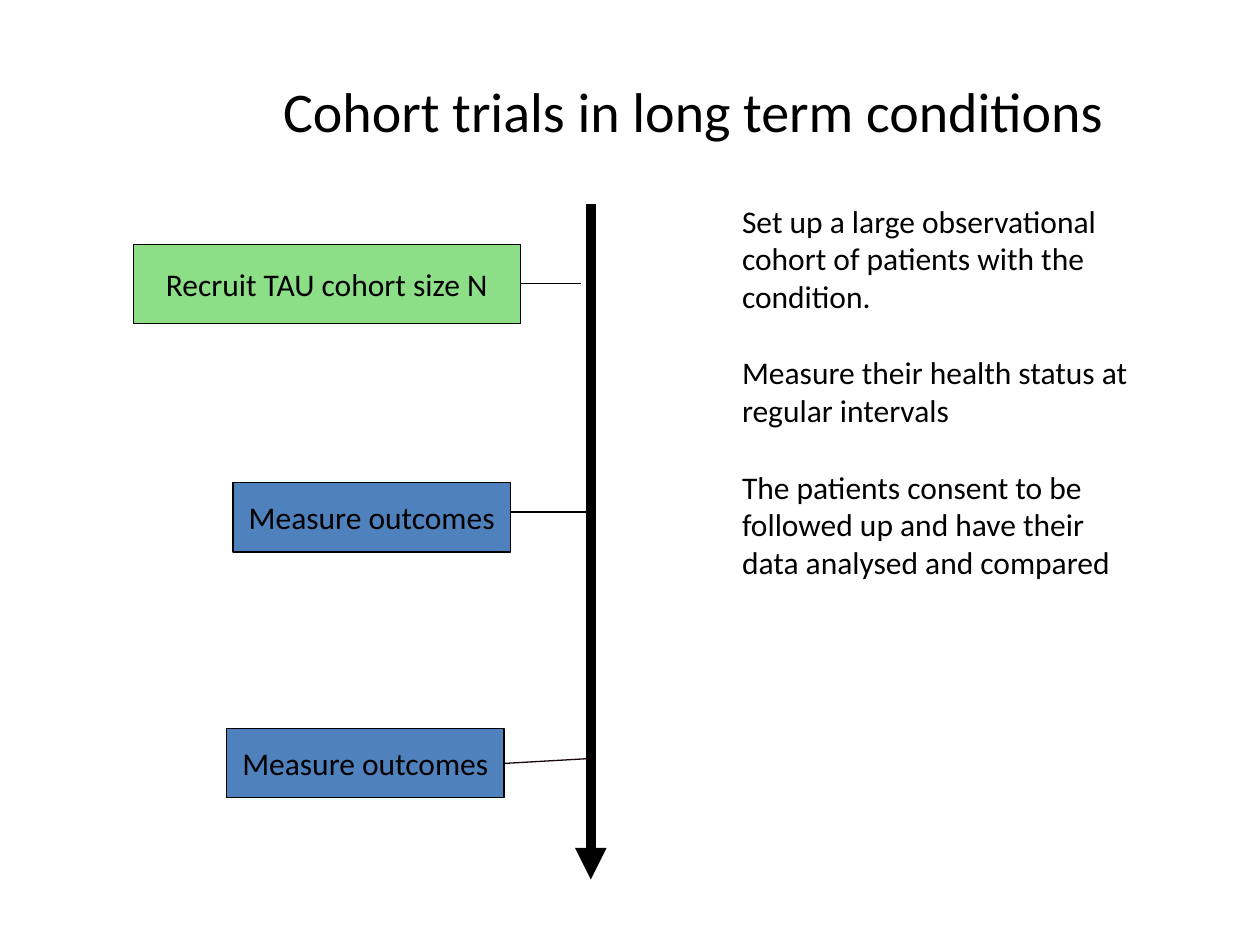
"""Build a slide showing the timeline of a cohort trial."""
from lxml import etree
from pptx import Presentation
from pptx.dml.color import RGBColor
from pptx.enum.shapes import MSO_CONNECTOR, MSO_SHAPE
from pptx.enum.text import MSO_ANCHOR, PP_ALIGN
from pptx.oxml.ns import qn
from pptx.util import Cm, Pt

STRAIGHT = MSO_CONNECTOR.STRAIGHT
RECTANGLE = MSO_SHAPE.RECTANGLE
MIDDLE, TOP = MSO_ANCHOR.MIDDLE, MSO_ANCHOR.TOP
CENTER, LEFT = PP_ALIGN.CENTER, PP_ALIGN.LEFT

COLORS = {"ink": "000000", "recruit": "8DDF87", "measure": "4F81BD", "dark": "140707"}
FONT = "Calibri"
TITLE = "Cohort trials in long term conditions"
NOTES = [
    "Set up a large observational cohort of patients with the condition.",
    "Measure their health status at regular intervals",
    "The patients consent to be followed up and have their data analysed and compared",
]
AXIS_X, AXIS_TOP, AXIS_BOTTOM = 11.91, 4.11, 17.73
STEPS = [
    {"text": "Recruit TAU cohort size N", "fill": "recruit", "box": (2.69, 4.93, 7.8, 1.6),
     "link": (5.72, 11.71, 5.72), "line": "ink"},
    {"text": "Measure outcomes", "fill": "measure", "box": (4.7, 9.73, 5.59, 1.4),
     "link": (10.32, AXIS_X, 10.32), "line": "ink"},
    {"text": "Measure outcomes", "fill": "measure", "box": (4.57, 14.68, 5.59, 1.4),
     "link": (15.39, AXIS_X, 15.29), "line": "dark"},
]


def color(name):
    return RGBColor.from_string(COLORS[name])


def write(shape, paragraphs, size=18, align=LEFT, anchor=TOP, wrap=True, gap=0):
    frame = shape.text_frame
    frame.word_wrap = wrap
    frame.vertical_anchor = anchor
    for index, text in enumerate(paragraphs):
        para = frame.add_paragraph() if index else frame.paragraphs[0]
        para.alignment = align
        para.space_before = Pt(gap if index else 0)
        span = para.add_run()
        span.text = text
        span.font.name = FONT
        span.font.size = Pt(size)
        span.font.color.rgb = color("ink")


def add_line(page, start, end, width=0.75, ink="ink", arrow=False):
    line = page.shapes.add_connector(STRAIGHT, *map(Cm, start + end))
    line.line.color.rgb = color(ink)
    line.line.width = Pt(width)
    if arrow:
        etree.SubElement(line.line._get_or_add_ln(), qn("a:tailEnd"), type="triangle")
    etree.SubElement(line._element.spPr, qn("a:effectLst"))


def add_step(page, step):
    left, top, width, height = step["box"]
    box = page.shapes.add_shape(RECTANGLE, *map(Cm, step["box"]))
    box.shadow.inherit = False
    box.fill.solid()
    box.fill.fore_color.rgb = color(step["fill"])
    box.line.color.rgb = color("ink")
    box.line.width = Pt(0.75)
    write(box, [step["text"]], align=CENTER, anchor=MIDDLE, wrap=False)
    start_y, end_x, end_y = step["link"]
    add_line(page, (left + width, start_y), (end_x, end_y), ink=step["line"])


def main():
    deck = Presentation()
    deck.slide_width, deck.slide_height = Cm(25.4), Cm(19.05)
    page = deck.slides.add_slide(deck.slide_layouts[5])

    title = page.shapes.title
    title.left, title.top, title.width, title.height = map(Cm, (4.24, 0.53, 19.48, 3.4))
    write(title, [TITLE], size=32, align=CENTER, anchor=MIDDLE)

    add_line(page, (AXIS_X, AXIS_TOP), (AXIS_X, AXIS_BOTTOM), width=6, arrow=True)
    for step in STEPS:
        add_step(page, step)

    notes = page.shapes.add_textbox(*map(Cm, (14.71, 3.94, 8.41, 7.95)))
    write(notes, NOTES, gap=22)
    deck.save("out.pptx")


if __name__ == "__main__":
    main()
